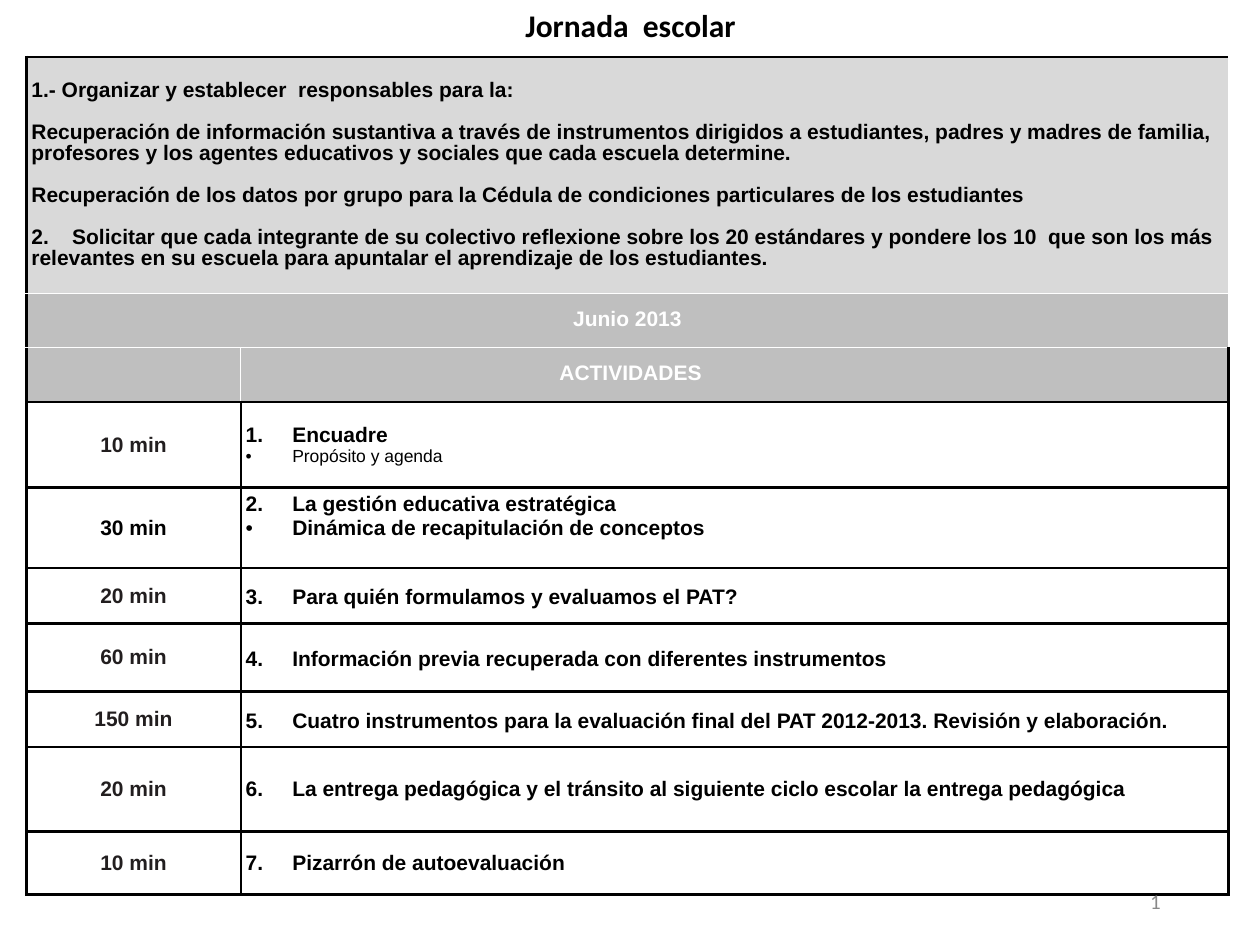
from pptx import Presentation
from pptx.dml.color import RGBColor
from pptx.enum.text import MSO_ANCHOR, MSO_AUTO_SIZE, PP_ALIGN
from pptx.oxml import parse_xml
from pptx.oxml.ns import nsdecls, qn
from pptx.util import Inches, Pt

LEFT, CENTER, RIGHT = PP_ALIGN.LEFT, PP_ALIGN.CENTER, PP_ALIGN.RIGHT
TOP, MIDDLE = MSO_ANCHOR.TOP, MSO_ANCHOR.MIDDLE
NO_FIT = MSO_AUTO_SIZE.NONE

# The slide is a grid of 1000 columns by 750 rows
UNIT = Inches(0.01)
BLACK, WHITE, INK = "000000", "FFFFFF", "221E1F"
PALE, GREY, MUTED = "D9D9D9", "BFBFBF", "898989"
HANGING = 37

INTRO = [
    "1.- Organizar y establecer  responsables para la:",
    "Recuperación de información sustantiva a través de instrumentos dirigidos a estudiantes, "
    "padres y madres de familia, profesores y los agentes educativos y sociales que cada "
    "escuela determine.",
    "Recuperación de los datos por grupo para la Cédula de condiciones particulares de los "
    "estudiantes",
    "2.    Solicitar que cada integrante de su colectivo reflexione sobre los 20 estándares y "
    "pondere los 10  que son los más relevantes en su escuela para apuntalar el aprendizaje "
    "de los estudiantes.",
]
# Row height, duration, activity, line spacing
ACTIVITIES = [
    (68, "10 min", "Encuadre", 1),
    (64, "30 min", "La gestión educativa estratégica", 1),
    (44, "20 min", "Para quién formulamos y evaluamos el PAT?", 1.15),
    (54, "60 min", "Información previa recuperada con diferentes instrumentos", 1.15),
    (44, "150 min", "Cuatro instrumentos para la evaluación final del PAT 2012-2013. "
                    "Revisión y elaboración.", 1.15),
    (67, "20 min", "La entrega pedagógica y el tránsito al siguiente ciclo escolar "
                   "la entrega pedagógica", 1),
    (50, "10 min", "Pizarrón de autoevaluación", 1),
]
# Second line of an activity: text and its format
DETAILS = {
    1: ("Propósito y agenda", {"size": 10, "bold": False}),
    2: ("Dinámica de recapitulación de conceptos", {}),
}
HEADER_ROWS = [188, 43, 43]


def color(value):
    return RGBColor.from_string(value)


def add_text(frame, text, size=12, font="Arial", ink=BLACK, bold=True, align=LEFT,
             line=1, after=0, indent=0, number=None, bullet=False):
    """Write one paragraph, filling the frame's empty first one if there is one."""
    para = frame.paragraphs[-1]
    if para.runs:
        para = frame.add_paragraph()
    para.alignment, para.line_spacing = align, line
    para.space_before, para.space_after = Pt(0), Pt(after)
    span = para.add_run()
    span.text = text
    span.font.size, span.font.name, span.font.bold = Pt(size), font, bold
    span.font.color.rgb = color(ink)
    properties = para._p.get_or_add_pPr()
    properties.set("marL", str(indent * UNIT))
    if number or bullet:
        properties.set("indent", str(-indent * UNIT))
        properties.append(parse_xml(f'<a:buFont {nsdecls("a")} typeface="Arial"/>'))
        mark = (f'<a:buAutoNum {nsdecls("a")} type="arabicPeriod" startAt="{number}"/>'
                if number else f'<a:buChar {nsdecls("a")} char="•"/>')
        properties.append(parse_xml(mark))
    return span


class Page:
    def __init__(self, deck):
        self.slide = deck.slides.add_slide(deck.slide_layouts[5])

    def place(self, shape, left, top, width, height):
        shape.left, shape.top = left * UNIT, top * UNIT
        shape.width, shape.height = width * UNIT, height * UNIT

    def title(self, text, *area):
        box = self.slide.shapes.title
        self.place(box, *area)
        frame = box.text_frame
        frame.word_wrap, frame.auto_size = False, NO_FIT
        frame.vertical_anchor = MIDDLE
        add_text(frame, text, size=18, font="Calibri", align=CENTER)

    def page_number(self, *area):
        box = self.slide.shapes.add_textbox(*(length * UNIT for length in area))
        frame = box.text_frame
        frame.word_wrap, frame.vertical_anchor = True, MIDDLE
        span = add_text(frame, "1", font="Calibri", ink=MUTED, bold=False, align=RIGHT)
        field = span._r
        field.tag = qn("a:fld")
        field.set("id", "{B6F15528-21DE-4FAA-801E-634DDDAF4B2B}")
        field.set("type", "slidenum")

    def table(self, left, top, columns, rows):
        frame = self.slide.shapes.add_table(
            len(rows), len(columns), left * UNIT, top * UNIT,
            sum(columns) * UNIT, sum(rows) * UNIT)
        table = frame.table
        table.first_row = table.horz_banding = False
        for column, width in zip(table.columns, columns):
            column.width = width * UNIT
        for row, height in zip(table.rows, rows):
            row.height = height * UNIT
        return table

    def cell(self, cell, fill, edges):
        """Fill a cell and draw its edges, given as side=(colour, points)."""
        cell.fill.solid()
        cell.fill.fore_color.rgb = color(fill)
        cell.vertical_anchor = MIDDLE
        cell.margin_left = cell.margin_right = 4 * UNIT
        cell.margin_top = cell.margin_bottom = 4 * UNIT
        properties = cell._tc.get_or_add_tcPr()
        for place, side in enumerate("LRTB"):
            ink, points = edges[side]
            properties.insert(place, parse_xml(
                f'<a:ln{side} {nsdecls("a")} w="{Pt(points)}"><a:solidFill>'
                f'<a:srgbClr val="{ink}"/></a:solidFill></a:ln{side}>'))


def build_schedule(page):
    rows = HEADER_ROWS + [activity[0] for activity in ACTIVITIES]
    table = page.table(21, 45, [170, 784], rows)
    dark, light = (BLACK, 1.5), (WHITE, 1)

    # Cell style: header rows are grey and parted by white lines
    for row in range(len(rows)):
        inner = light if row < 3 else dark
        fill = (PALE, GREY, GREY)[row] if row < 3 else WHITE
        for column in range(2):
            page.cell(table.cell(row, column), fill, {
                "L": inner if column else dark,
                "R": dark if column else inner,
                "T": light if row in (1, 2) else dark,
                "B": light if row in (0, 1) else dark})
    for row in (0, 1):
        table.cell(row, 0).merge(table.cell(row, 1))

    # Header text
    for text in INTRO:
        add_text(table.cell(0, 0).text_frame, text, line=Pt(12),
                 after=0 if text == INTRO[-1] else 12)
    add_text(table.cell(1, 0).text_frame, "Junio 2013", ink=WHITE, align=CENTER, line=Pt(12))
    add_text(table.cell(2, 1).text_frame, "ACTIVIDADES", ink=WHITE, indent=249, line=Pt(12))

    # Durations and numbered activities
    for number, (_, duration, activity, line) in enumerate(ACTIVITIES, 1):
        time_cell, activity_cell = table.rows[number + 2].cells
        add_text(time_cell.text_frame, duration, align=CENTER,
                 ink=BLACK if number == 2 else INK)
        add_text(activity_cell.text_frame, activity, line=line,
                 indent=HANGING, number=number)
        if number in DETAILS:
            text, style = DETAILS[number]
            add_text(activity_cell.text_frame, text, indent=HANGING, bullet=True, **style)
    table.cell(4, 1).vertical_anchor = TOP


def main():
    deck = Presentation()
    deck.slide_width, deck.slide_height = 1000 * UNIT, 750 * UNIT
    page = Page(deck)
    build_schedule(page)
    page.page_number(706, 695, 225, 40)
    page.title("Jornada  escolar", 406, 0, 189, 40)
    deck.save("out.pptx")


if __name__ == "__main__":
    main()
